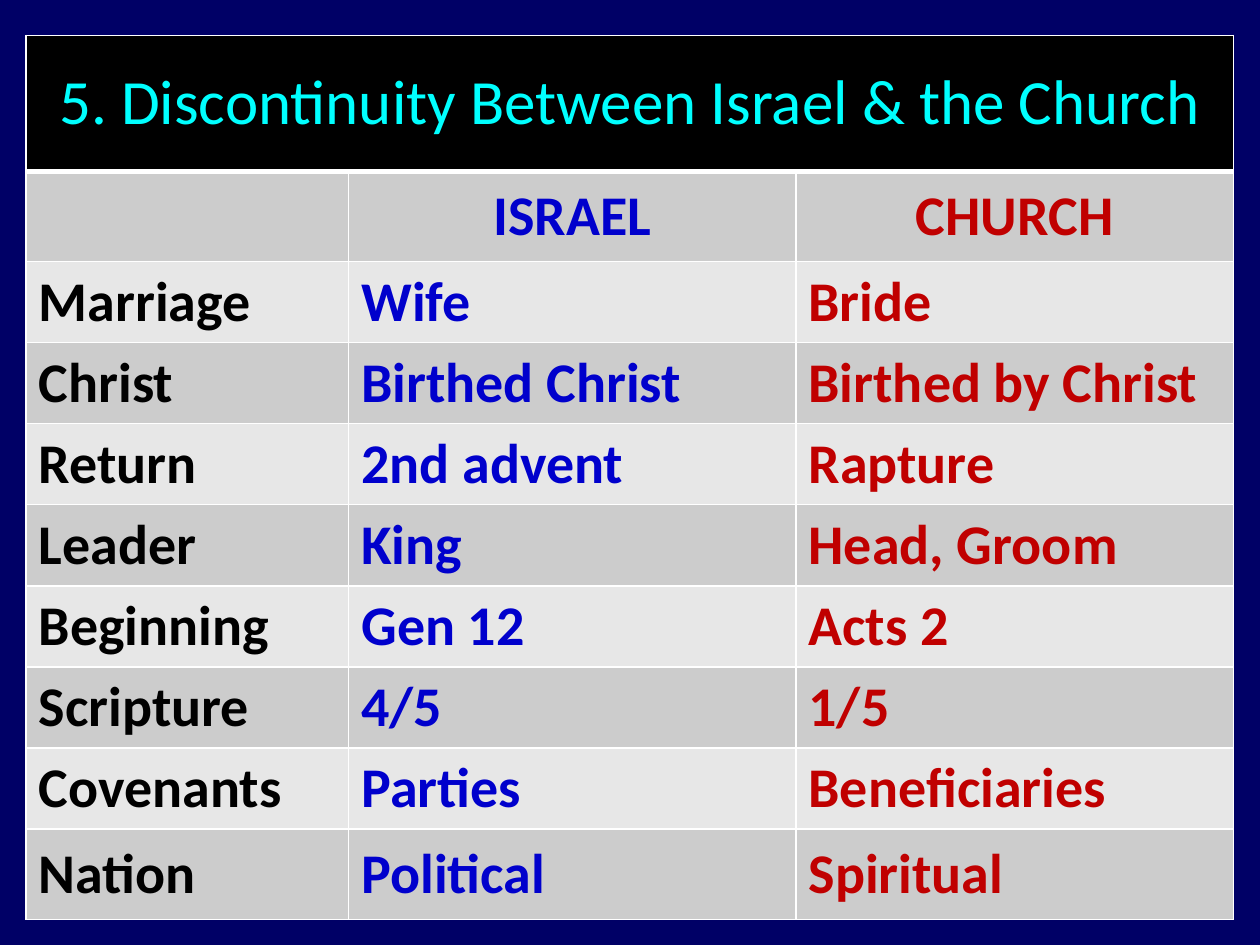
import pptx
import pptx.util
import pptx.dml.color
import pptx.enum.text
import pptx.oxml.ns
import lxml.etree

Pt = pptx.util.Pt
ALIGN = pptx.enum.text.PP_ALIGN
MIDDLE = pptx.enum.text.MSO_ANCHOR.MIDDLE

COLORS = {
    "navy": "000066", "black": "000000", "cyan": "00FFFF", "white": "FFFFFF",
    "blue": "0000CC", "red": "C00000", "dark_band": "CCCCCC", "light_band": "E7E7E7",
}
COLUMN_COLORS = ["black", "blue", "red"]
TITLE = "5. Discontinuity Between Israel & the Church"
ROWS = [
    ("", "ISRAEL", "CHURCH"),
    ("Marriage", "Wife", "Bride"),
    ("Christ", "Birthed Christ", "Birthed by Christ"),
    ("Return", "2nd advent", "Rapture"),
    ("Leader", "King", "Head, Groom"),
    ("Beginning", "Gen 12", "Acts 2"),
    ("Scripture", "4/5", "1/5"),
    ("Covenants", "Parties", "Beneficiaries"),
    ("Nation", "Political", "Spiritual"),
]
TITLE_FORMAT = {"size": Pt(36), "name": "Calibri", "bold": False}
BODY_FORMAT = {"size": Pt(32), "name": "Calibri", "bold": True}


def rgb(color):
    return pptx.dml.color.RGBColor.from_string(COLORS[color])


def add_child(parent, tag, **values):
    child = lxml.etree.SubElement(parent, pptx.oxml.ns.qn(tag))
    for name, value in values.items():
        child.set(name, str(value))
    return child


def set_borders(cell, widths):
    properties = cell._tc.get_or_add_tcPr()
    for side in "LRTB":
        line = add_child(properties, f"a:ln{side}", w=int(Pt(widths.get(side, 1))))
        add_child(add_child(line, "a:solidFill"), "a:srgbClr", val=COLORS["white"])


def format_cell(cell, text, fill, color, alignment, font_format, widths):
    set_borders(cell, widths)
    cell.fill.solid()
    cell.fill.fore_color.rgb = rgb(fill)
    cell.vertical_anchor = MIDDLE
    if not text:
        return
    para = cell.text_frame.paragraphs[0]
    para.alignment = alignment
    spacing = add_child(para._p.get_or_add_pPr(), "a:spcBef")
    add_child(spacing, "a:spcPct", val=20000)
    span = para.add_run()
    span.text = text
    for name, value in font_format.items():
        setattr(span.font, name, value)
    span.font.color.rgb = rgb(color)


def add_comparison_table(page, left, top, width, height):
    frame = page.shapes.add_table(len(ROWS) + 1, 3, Pt(left), Pt(top), Pt(width), Pt(height))
    table = frame.table

    # The last column and the seven inner rows share what is left of the box
    label_width, israel_width = 184.3, 255.6
    column_widths = [label_width, israel_width, width - label_width - israel_width]
    title_height, outer_height = 77.7, 51.5
    inner_count = len(ROWS) - 2
    inner_height = (height - title_height - 2 * outer_height) / inner_count
    row_heights = [title_height, outer_height, *[inner_height] * inner_count, outer_height]
    for column, column_width in zip(table.columns, column_widths):
        column.width = Pt(column_width)
    for row, row_height in zip(table.rows, row_heights):
        row.height = Pt(row_height)

    # Title across all columns
    table.cell(0, 0).merge(table.cell(0, 2))
    for column in range(3):
        format_cell(table.cell(0, column), "" if column else TITLE, "black", "cyan",
                    ALIGN.CENTER, TITLE_FORMAT, {"B": 3})

    # Headings and banded rows
    for number, texts in enumerate(ROWS, start=1):
        fill = "dark_band" if number % 2 else "light_band"
        alignment = ALIGN.CENTER if number == 1 else ALIGN.LEFT
        widths = {"T": 3} if number == 1 else {}
        for column, text in enumerate(texts):
            format_cell(table.cell(number, column), text, fill, COLUMN_COLORS[column],
                        alignment, BODY_FORMAT, widths)


def main():
    deck = pptx.Presentation()
    deck.slide_width, deck.slide_height = Pt(720), Pt(540)
    page = deck.slides.add_slide(deck.slide_layouts[6])
    page.background.fill.solid()
    page.background.fill.fore_color.rgb = rgb("navy")
    add_comparison_table(page, left=15, top=20.2, width=689.8, height=504.8)
    deck.save("out.pptx")


if __name__ == "__main__":
    main()
